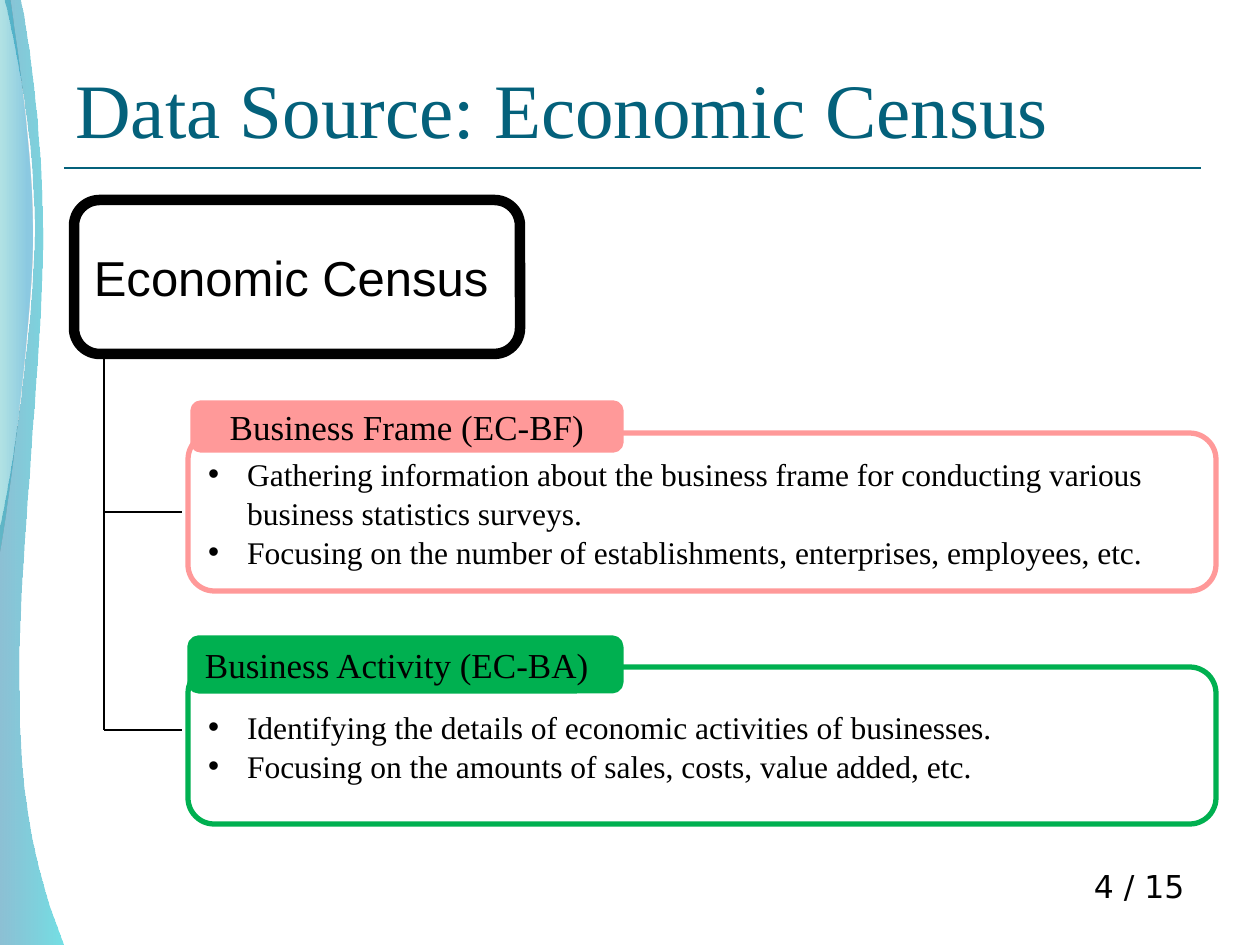
from dataclasses import dataclass

from lxml import etree
from pptx import Presentation
from pptx.dml.color import RGBColor
from pptx.enum import shapes, text
from pptx.oxml.ns import qn
from pptx.util import Pt

SCALE = 7257  # EMU in one px, 126 px to the inch
CURVE_STEPS = 16
SERIF, SANS, NUMERALS = "Times New Roman", "Arial", "DejaVu Sans"
LEFT, CENTER, RIGHT = text.PP_ALIGN.LEFT, text.PP_ALIGN.CENTER, text.PP_ALIGN.RIGHT

BLACK = RGBColor(0x00, 0x00, 0x00)
WHITE = RGBColor(0xFF, 0xFF, 0xFF)
TEAL = RGBColor(0x04, 0x61, 0x7B)
PINK = RGBColor(0xFF, 0x99, 0x99)
GREEN = RGBColor(0x00, 0xB0, 0x50)
DEEP_BLUE = RGBColor(0x00, 0x74, 0xA1)
CYAN = RGBColor(0x00, 0xC6, 0xCF)
SEA_GREEN = RGBColor(0x00, 0xA1, 0xA9)
SKY_BLUE = RGBColor(0x00, 0x8B, 0xBF)


@dataclass(frozen=True)
class Area:
    left: int
    top: int
    width: int
    height: int

    def emu(self):
        return [px * SCALE for px in (self.left, self.top, self.width, self.height)]


@dataclass(frozen=True)
class Style:
    size: int
    font: str = SERIF
    color: RGBColor = BLACK
    align: text.PP_ALIGN = LEFT


@dataclass(frozen=True)
class Stop:
    position: float
    color: RGBColor
    opacity: int  # percent


@dataclass(frozen=True)
class Wave:
    """Segments hold one point for a line, three for a Bezier curve."""
    start: tuple
    segments: tuple
    stops: tuple


@dataclass(frozen=True)
class Census:
    color: RGBColor
    frame: Area
    label_area: Area
    label: str
    label_align: text.PP_ALIGN
    points: tuple


WAVES = (
    Wave((0, 945), (
        ((0, 529),),
        ((10, 495), (35, 318), (35, 228)),
        ((35, 139), (15, 39), (5, 0)),
        ((21, 0),),
        ((25, 15), (43, 122), (43, 239)),
        ((43, 357), (16, 585), (20, 702)),
        ((20, 823), (47, 902), (64, 945)),
    ), (Stop(0, DEEP_BLUE, 45), Stop(1, CYAN, 55))),
    Wave((0, 551), (
        ((6, 519), (30, 336), (32, 244)),
        ((33, 152), (15, 40), (10, 0)),
        ((0, 0),),
    ), (Stop(0, SEA_GREEN, 30), Stop(0.8, SKY_BLUE, 45))),
)

CENSUSES = (
    Census(PINK, Area(188, 433, 1028, 158), Area(193, 403, 428, 47),
           "Business Frame (EC-BF)", CENTER,
           ("Gathering information about the business frame for conducting "
            "various business statistics surveys.",
            "Focusing on the number of establishments, enterprises, employees, etc.")),
    Census(GREEN, Area(188, 667, 1028, 157), Area(190, 638, 431, 53),
           "Business Activity (EC-BA)", LEFT,
           ("Identifying the details of economic activities of businesses.",
            "Focusing on the amounts of sales, costs, value added, etc.")),
)

TRUNK_X, BRANCH_X, TRUNK_TOP = 104, 182, 354
BRANCH_YS = (512, 730)


def bezier(points, t):
    """Return the point at t, by repeated interpolation."""
    while len(points) > 1:
        points = [(a[0] + (b[0] - a[0]) * t, a[1] + (b[1] - a[1]) * t)
                  for a, b in zip(points, points[1:])]
    return points[0]


def add_wave(page, wave: Wave):
    here, outline = wave.start, []
    for segment in wave.segments:
        steps = CURVE_STEPS if len(segment) > 1 else 1
        outline += [bezier([here, *segment], step / steps) for step in range(1, steps + 1)]
        here = segment[-1]
    builder = page.shapes.build_freeform(*(px * SCALE for px in wave.start))
    builder.add_line_segments([(round(x * SCALE), round(y * SCALE)) for x, y in outline])
    shape = builder.convert_to_shape()
    shape.shadow.inherit = False
    shape.line.fill.background()
    shape.fill.gradient()
    shape.fill.gradient_angle = 0
    elements = shape.element.spPr.iter(qn("a:gs"))
    for target, element, stop in zip(shape.fill.gradient_stops, list(elements), wave.stops):
        target.color.rgb = stop.color
        target.position = stop.position
        etree.SubElement(element[0], qn("a:alpha"), val=str(stop.opacity * 1000))


def add_line(page, start, end, color: RGBColor, weight: float):
    line = page.shapes.add_connector(
        shapes.MSO_CONNECTOR.STRAIGHT, *(px * SCALE for px in (*start, *end)))
    line.line.color.rgb = color
    line.line.width = Pt(weight)
    etree.SubElement(line.element.spPr, qn("a:effectLst"))


def write(box, paragraphs, style: Style, anchor, bulleted: bool = False):
    frame = box.text_frame
    frame.word_wrap = True
    frame.vertical_anchor = anchor
    for index, words in enumerate(paragraphs):
        para = frame.add_paragraph() if index else frame.paragraphs[0]
        para.alignment = style.align
        if bulleted:
            para.line_spacing = 1.04
            properties = para._p.get_or_add_pPr()
            indent = 39 * SCALE
            properties.set("marL", str(indent))
            properties.set("indent", str(-indent))
            etree.SubElement(properties, qn("a:buFont"), typeface=SANS)
            etree.SubElement(properties, qn("a:buChar"), char="•")
        span = para.add_run()
        span.text = words
        span.font.size = Pt(style.size)
        span.font.name = style.font
        span.font.color.rgb = style.color


def add_text(page, area: Area, words: str, style: Style, anchor):
    write(page.shapes.add_textbox(*area.emu()), (words,), style, anchor)


def add_panel(page, area: Area, fill: RGBColor, border: RGBColor, weight: int,
              paragraphs, style: Style, bulleted: bool = False):
    panel = page.shapes.add_shape(shapes.MSO_SHAPE.ROUNDED_RECTANGLE, *area.emu())
    panel.shadow.inherit = False
    panel.fill.solid()
    panel.fill.fore_color.rgb = fill
    panel.line.color.rgb = border
    panel.line.width = Pt(weight)
    write(panel, paragraphs, style, text.MSO_ANCHOR.MIDDLE, bulleted)


def main():
    deck = Presentation()
    deck.slide_width, deck.slide_height = 1260 * SCALE, 945 * SCALE
    page = deck.slides.add_slide(deck.slide_layouts[6])

    add_line(page, (64, 168), (1201, 168), TEAL, 1.5)
    for wave in WAVES:
        add_wave(page, wave)
    add_text(page, Area(63, 3, 1222, 157), "Data Source: Economic Census",
             Style(44, color=TEAL), text.MSO_ANCHOR.BOTTOM)
    add_text(page, Area(903, 861, 294, 63), "4 / 15",
             Style(18, NUMERALS, align=RIGHT), text.MSO_ANCHOR.TOP)

    add_line(page, (TRUNK_X, TRUNK_TOP), (TRUNK_X, BRANCH_YS[-1]), BLACK, 0.75)
    for y in BRANCH_YS:
        add_line(page, (BRANCH_X, y), (TRUNK_X, y), BLACK, 0.75)

    add_panel(page, Area(74, 200, 446, 154), WHITE, BLACK, 6,
              ("Economic Census",), Style(28, SANS))
    for census in CENSUSES:
        add_panel(page, census.frame, WHITE, census.color, 3,
                  census.points, Style(18), bulleted=True)
        add_panel(page, census.label_area, census.color, census.color, 3,
                  (census.label,), Style(20, align=census.label_align))

    deck.save("out.pptx")


if __name__ == "__main__":
    main()
